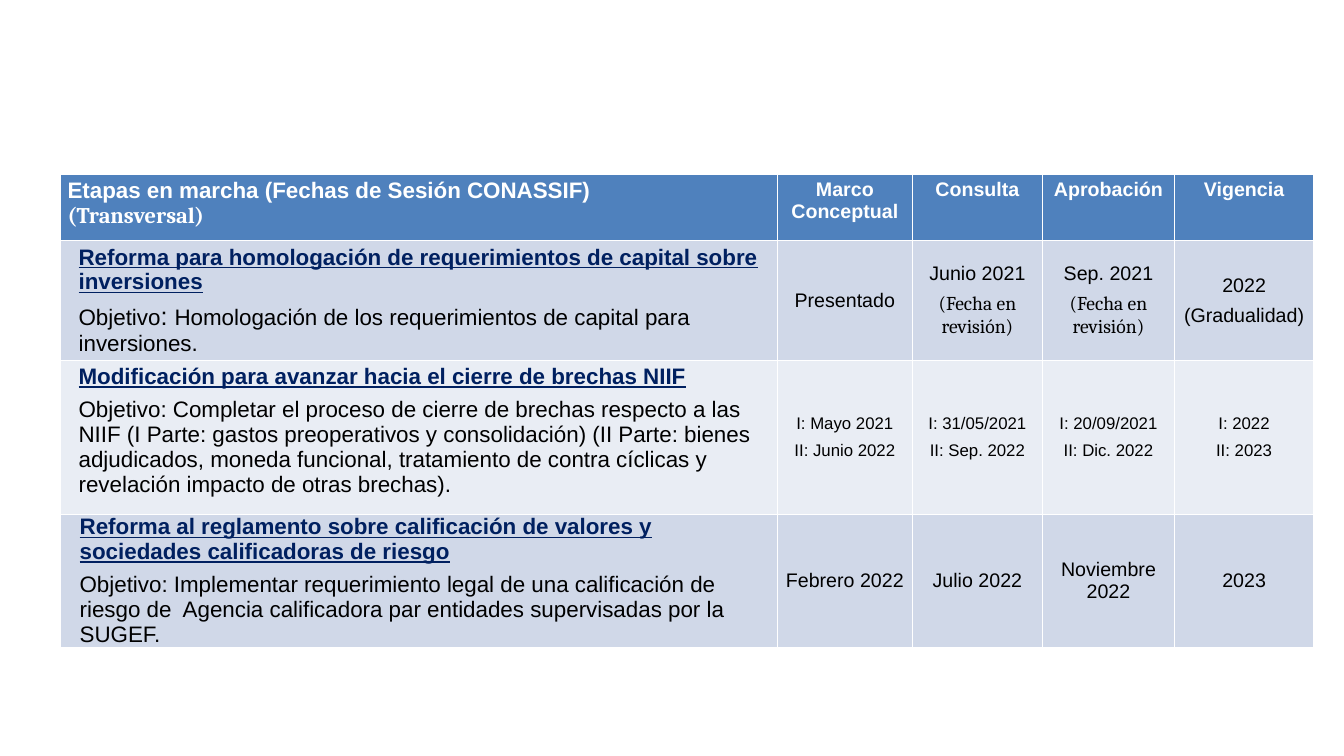
from dataclasses import dataclass

from pptx import Presentation
from pptx.dml.color import RGBColor
from pptx.enum.text import MSO_ANCHOR, PP_ALIGN
from pptx.util import Inches, Pt


@dataclass(frozen=True)
class Theme:
    header: RGBColor = RGBColor(0x4F, 0x81, 0xBD)
    band_dark: RGBColor = RGBColor(0xD0, 0xD8, 0xE8)
    band_light: RGBColor = RGBColor(0xE9, 0xED, 0xF4)
    heading: RGBColor = RGBColor(0x00, 0x20, 0x60)
    text: RGBColor = RGBColor(0x00, 0x00, 0x00)
    white: RGBColor = RGBColor(0xFF, 0xFF, 0xFF)
    sans: str = "Arial"
    serif: str = "Cambria"
    colon: int = 18
    reform: int = 16
    stage: int = 14
    phase: int = 12


THEME = Theme()


def prepare_cell(cell, fill, side, edge, anchor):
    cell.fill.solid()
    cell.fill.fore_color.rgb = fill
    cell.margin_left = cell.margin_right = Inches(side)
    cell.margin_top = cell.margin_bottom = Inches(edge)
    cell.vertical_anchor = anchor


def write_paragraph(cell, position, text, size, color, bold=False, gap=0):
    frame = cell.text_frame
    paragraph = frame.paragraphs[0] if position == 0 else frame.add_paragraph()
    if position:
        paragraph.space_before = Pt(gap)
    paragraph.add_run().text = text
    paragraph.font.size = Pt(size)
    paragraph.font.bold = bold
    paragraph.font.color.rgb = color
    is_serif = text in ("(Transversal)", "(Fecha en revisión)")
    paragraph.font.name = THEME.serif if is_serif else THEME.sans
    return paragraph


# Content
headers = [
    ["Etapas en marcha (Fechas de Sesión CONASSIF)", "(Transversal)"],
    ["Marco", "Conceptual"],
    ["Consulta"],
    ["Aprobación"],
    ["Vigencia"],
]
# Each reform: heading, objective, stage dates, stage size, indent, side and edge margins
reforms = [
    (
        "Reforma para homologación de requerimientos de capital sobre inversiones",
        "Objetivo: Homologación de los requerimientos de capital para inversiones.",
        [["Presentado"], ["Junio 2021", "(Fecha en revisión)"],
         ["Sep. 2021", "(Fecha en revisión)"], ["2022", "(Gradualidad)"]],
        THEME.stage, 0.1, 0.08, 0.04,
    ),
    (
        "Modificación para avanzar hacia el cierre de brechas NIIF",
        "Objetivo: Completar el proceso de cierre de brechas respecto a las NIIF "
        "(I Parte: gastos preoperativos y consolidación) (II Parte: bienes adjudicados, "
        "moneda funcional, tratamiento de contra cíclicas y revelación impacto de otras brechas).",
        [["I: Mayo 2021", "II: Junio 2022"], ["I: 31/05/2021", "II: Sep. 2022"],
         ["I: 20/09/2021", "II: Dic. 2022"], ["I: 2022", "II: 2023"]],
        THEME.phase, 0.1, 0.08, 0.04,
    ),
    (
        "Reforma al reglamento sobre calificación de valores y sociedades "
        "calificadoras de riesgo",
        "Objetivo: Implementar requerimiento legal de una calificación de riesgo de  "
        "Agencia calificadora par entidades supervisadas por la SUGEF.",
        [["Febrero 2022"], ["Julio 2022"], ["Noviembre 2022"], ["2023"]],
        THEME.stage, 0.19, 0, 0,
    ),
]
column_widths = [7.11, 1.34, 1.29, 1.31, 1.38]
row_heights = [0.66, 1.18, 1.53, 1.32]

# Slide and table
prs = Presentation()
prs.slide_width, prs.slide_height = Inches(13.33), Inches(7.5)
slide = prs.slides.add_slide(prs.slide_layouts[6])
schedule = slide.shapes.add_table(
    len(row_heights), len(column_widths), Inches(0.6), Inches(1.73),
    Inches(sum(column_widths)), Inches(sum(row_heights)),
).table
for column, width in zip(schedule.columns, column_widths):
    column.width = Inches(width)
for row, height in zip(schedule.rows, row_heights):
    row.height = Inches(height)

# Header row
for column, lines in enumerate(headers):
    cell = schedule.cell(0, column)
    prepare_cell(cell, THEME.header, 0.07, 0.04, MSO_ANCHOR.TOP)
    size = THEME.stage if column else THEME.reform
    for position, line in enumerate(lines):
        paragraph = write_paragraph(cell, position, line, size, THEME.white, bold=True)
        paragraph.alignment = PP_ALIGN.CENTER if column else PP_ALIGN.LEFT

# Reform rows
for row, reform in enumerate(reforms, start=1):
    heading, objective, stages, stage_size, indent, side, edge = reform
    fill = THEME.band_dark if row % 2 else THEME.band_light

    reform_cell = schedule.cell(row, 0)
    prepare_cell(reform_cell, fill, side, edge, MSO_ANCHOR.TOP)
    title = write_paragraph(reform_cell, 0, heading, THEME.reform, THEME.heading, bold=True)
    title.font.underline = True
    goal = write_paragraph(reform_cell, 1, objective, THEME.reform, THEME.text, gap=6)
    for paragraph in (title, goal):
        paragraph.alignment = PP_ALIGN.LEFT
        paragraph._p.get_or_add_pPr().set("marL", str(Inches(indent)))

    # The first objective has a larger colon
    if row == 1:
        label, detail = objective.split(": ")
        goal.runs[0].text = label
        colon = goal.add_run()
        colon.text = ": "
        colon.font.size = Pt(THEME.colon)
        goal.add_run().text = detail

    for column, lines in enumerate(stages, start=1):
        cell = schedule.cell(row, column)
        prepare_cell(cell, fill, 0.08, 0.04, MSO_ANCHOR.MIDDLE)
        for position, line in enumerate(lines):
            paragraph = write_paragraph(cell, position, line, stage_size, THEME.text, gap=6)
            paragraph.alignment = PP_ALIGN.CENTER

prs.save("out.pptx")
